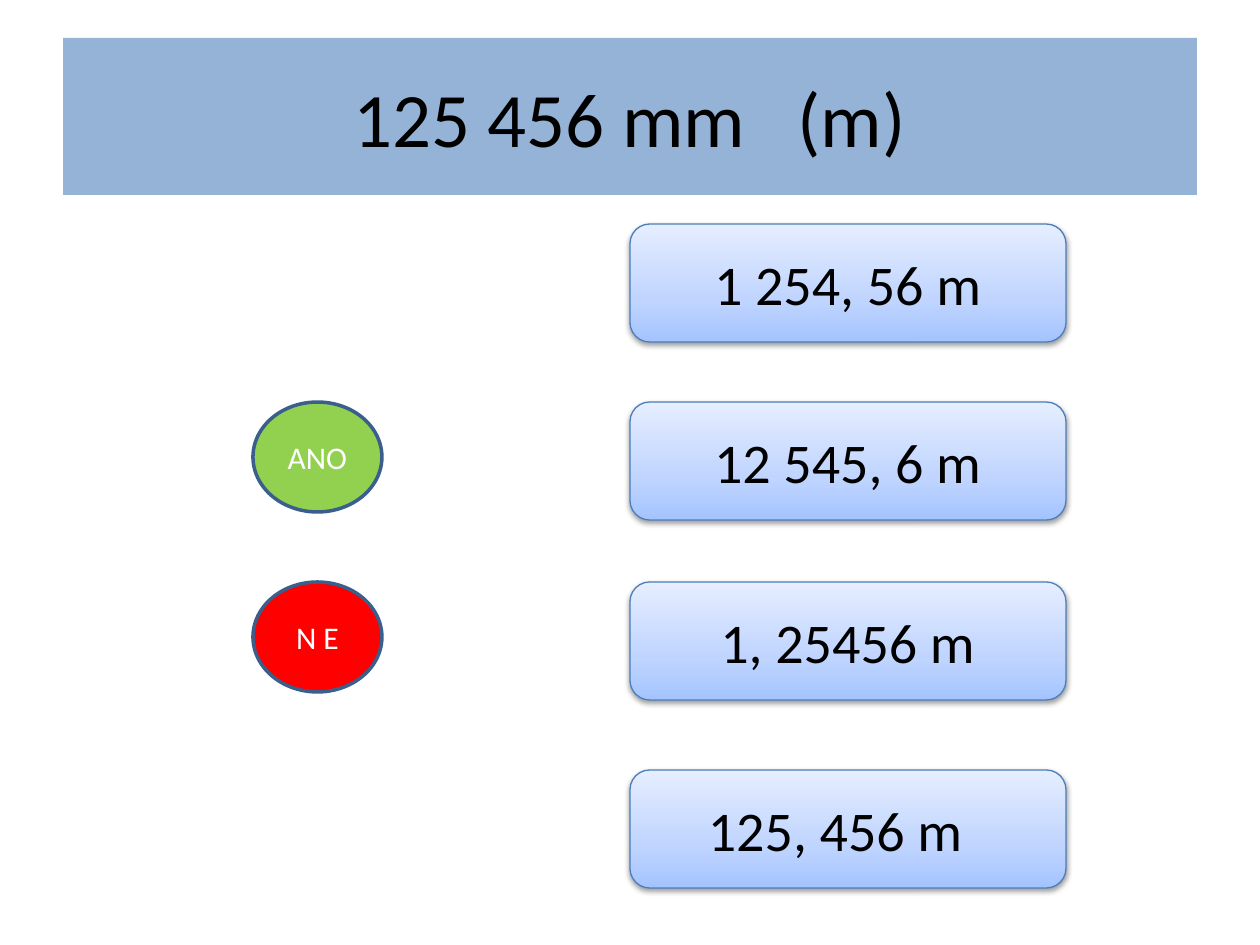
from dataclasses import dataclass

from pptx import Presentation
from pptx.dml.color import RGBColor
from pptx.enum.shapes import MSO_SHAPE
from pptx.enum.text import MSO_ANCHOR, PP_ALIGN
from pptx.oxml import parse_xml
from pptx.oxml.ns import nsdecls, qn
from pptx.util import Emu, Pt

SCALE = 914400 / 126
BLACK = RGBColor(0x00, 0x00, 0x00)
WHITE = RGBColor(0xFF, 0xFF, 0xFF)
BAND = RGBColor(0x95, 0xB3, 0xD7)
GREEN = RGBColor(0x92, 0xD0, 0x50)
RED = RGBColor(0xFF, 0x00, 0x00)
RIM = RGBColor(0x3A, 0x5F, 0x8C)
EDGE = RGBColor(0x4B, 0x7E, 0xBC)
STOPS = (
    (0, RGBColor(0xA4, 0xC4, 0xFF)),
    (35, RGBColor(0xBF, 0xD4, 0xFF)),
    (100, RGBColor(0xE6, 0xEE, 0xFF)),
)
ROWS = (224, 402, 582, 770)


@dataclass(frozen=True)
class Badge:
    text: str
    top: int
    fill: RGBColor


@dataclass(frozen=True)
class Answer:
    text: str
    top: int
    inset: int = 13


BADGES = (Badge("ANO", ROWS[1], GREEN), Badge("N E", ROWS[2], RED))
ANSWERS = (
    Answer("1 254, 56 m", ROWS[0]),
    Answer("12 545, 6 m", ROWS[1]),
    Answer("1, 25456 m", ROWS[2]),
    Answer("125, 456 m", ROWS[3], inset=38),
)


def px(num: int) -> Emu:
    return Emu(round(num * SCALE))


def write(shape, text: str, size: int, color: RGBColor) -> None:
    frame = shape.text_frame
    frame.word_wrap = True
    frame.vertical_anchor = MSO_ANCHOR.MIDDLE
    para = frame.paragraphs[0]
    para.alignment = PP_ALIGN.CENTER
    run = para.add_run()
    run.text = text
    style = {"name": "Calibri", "size": Pt(size)}
    for key, value in style.items():
        setattr(run.font, key, value)
    run.font.color.rgb = color


def add_badge(slide, badge: Badge) -> None:
    shape = slide.shapes.add_shape(
        MSO_SHAPE.OVAL, px(253), px(badge.top), px(129), px(110))
    shape.shadow.inherit = False
    shape.fill.solid()
    shape.fill.fore_color.rgb = badge.fill
    shape.line.color.rgb = RIM
    shape.line.width = Pt(2)
    write(shape, badge.text, 18, WHITE)


def shade(shape) -> None:
    """Add the three-stop gradient and the soft drop shadow."""
    stops = "".join(
        f'<a:gs pos="{pos * 1000}"><a:srgbClr val="{color}"/></a:gs>'
        for pos, color in STOPS)
    props = shape.element.spPr
    props.find(qn("a:ln")).addprevious(parse_xml(
        f'<a:gradFill {nsdecls("a")} rotWithShape="1"><a:gsLst>{stops}</a:gsLst>'
        '<a:lin ang="16200000" scaled="0"/></a:gradFill>'))
    props.find(qn("a:effectLst")).append(parse_xml(
        f'<a:outerShdw {nsdecls("a")} blurRad="40000" dist="20000" '
        'dir="5400000" rotWithShape="0"><a:srgbClr val="000000">'
        '<a:alpha val="38000"/></a:srgbClr></a:outerShdw>'))


def add_answer(slide, answer: Answer) -> None:
    shape = slide.shapes.add_shape(
        MSO_SHAPE.ROUNDED_RECTANGLE, px(630), px(answer.top), px(436), px(118))
    shape.shadow.inherit = False
    shape.line.color.rgb = EDGE
    shape.line.width = Pt(0.75)
    shade(shape)
    write(shape, answer.text, 32, BLACK)
    shape.text_frame.margin_right = px(answer.inset)


def add_title(slide) -> None:
    title = slide.shapes.title
    place = {"left": 63, "top": 38, "width": 1134, "height": 157}
    for key, value in place.items():
        setattr(title, key, px(value))
    title.fill.solid()
    title.fill.fore_color.rgb = BAND
    write(title, "125 456 mm   (m)", 44, BLACK)


def main() -> None:
    deck = Presentation()
    deck.slide_width, deck.slide_height = px(1260), px(945)
    slide = deck.slides.add_slide(deck.slide_layouts[5])
    add_title(slide)
    for badge in BADGES:
        add_badge(slide, badge)
    for answer in ANSWERS:
        add_answer(slide, answer)
    deck.save("out.pptx")


if __name__ == "__main__":
    main()
